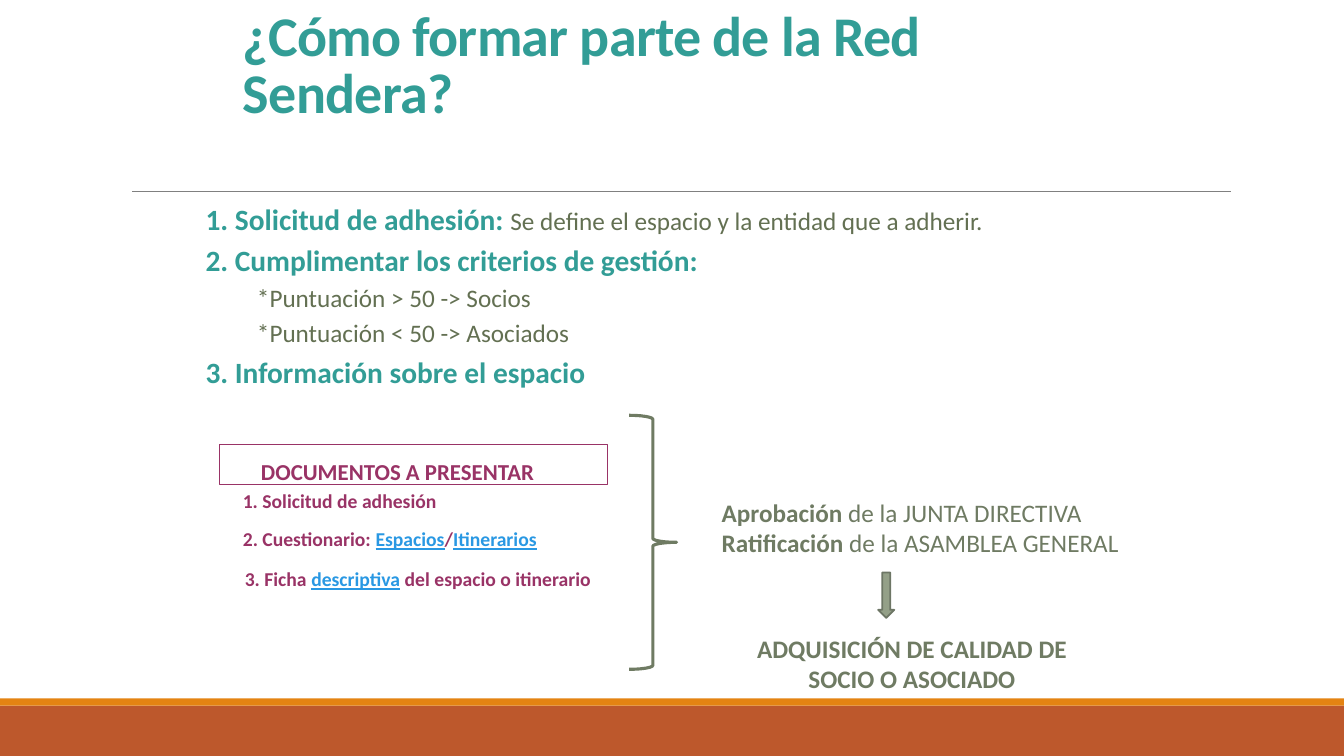
from dataclasses import dataclass

from pptx import Presentation
from pptx import util as u
from pptx.dml.color import RGBColor
from pptx.enum import shapes, text
from pptx.oxml.xmlchemy import OxmlElement

KIND = shapes.MSO_SHAPE
ANCHOR = text.MSO_ANCHOR
ALIGN = text.PP_ALIGN


@dataclass(frozen=True)
class Theme:
    font: str = "Calibri"
    teal: str = "329D96"
    olive: str = "637052"
    plum: str = "993366"
    link: str = "2998E3"
    sage: str = "6F7B63"
    arrow_fill: str = "94A088"
    arrow_line: str = "6D7665"
    rule: str = "808080"
    orange: str = "E48312"
    rust: str = "BD582C"
    title: float = 40
    heading: float = 21
    body: float = 18
    label: float = 16.3
    item: float = 14


T = Theme()


@dataclass(frozen=True)
class Run:
    words: str
    size: float
    color: str
    bold: bool = True
    underline: bool = False


@dataclass(frozen=True)
class Para:
    runs: list[Run]
    before: float = 0  # share of the type size
    indent: float = 0
    align: ALIGN = ALIGN.LEFT


@dataclass(frozen=True)
class TextBox:
    at: tuple[float, float, float, float]
    paras: list[Para]
    anchor: ANCHOR = ANCHOR.MIDDLE


@dataclass(frozen=True)
class Figure:
    kind: KIND
    at: tuple[float, float, float, float]
    fill: str | None = None
    line: str | None = None
    weight: float = 0


def heading(words: str, *more: Run) -> Para:
    return Para([Run(words, T.heading, T.teal), *more], 0.2)


def score(words: str) -> Para:
    return Para([Run(words, T.body, T.olive, False)], 0.2, 0.51)


def document(*parts: str) -> list[Para]:
    """One document line; every second part is styled as a link."""
    return [Para([Run(part, T.item, T.link if i % 2 else T.plum, underline=bool(i % 2))
                  for i, part in enumerate(parts)], 0.2)]


def step(name: str, rest: str) -> Para:
    return Para([Run(name, T.body, T.sage), Run(rest, T.body, T.sage, False)])


BANDS = [
    Figure(KIND.RECTANGLE, (0, 7, 13.33, 0.5), T.rust),
    Figure(KIND.RECTANGLE, (0, 6.93, 13.33, 0.07), T.orange),
]
FIGURES = [
    Figure(KIND.RECTANGLE, (2.18, 4.41, 3.85, 0.4), None, T.plum, 0.75),
    Figure(KIND.RIGHT_BRACE, (6.24, 4.12, 0.47, 2.52), None, T.sage, 2.25),
    Figure(KIND.DOWN_ARROW, (8.71, 5.68, 0.16, 0.45), T.arrow_fill, T.arrow_line, 1.25),
]
TITLE = TextBox((2.31, 0.6, 8.61, 0.69), [
    Para([Run("¿Cómo formar parte de la Red Sendera?", T.title, T.teal)]),
], ANCHOR.BOTTOM)
BOXES = [
    TextBox((1.94, 1.93, 8.82, 1.99), [
        heading("1. Solicitud de adhesión: ",
                Run("Se define el espacio y la entidad que a adherir.", T.body, T.olive, False)),
        heading("2. Cumplimentar los criterios de gestión:"),
        score("*Puntuación > 50 -> Socios"),
        score("*Puntuación < 50 -> Asociados"),
        heading("3. Información sobre el espacio"),
    ]),
    TextBox((2.49, 4.52, 4.13, 0.31),
            [Para([Run("DOCUMENTOS A PRESENTAR", T.label, T.plum)], 0.2)]),
    TextBox((2.31, 4.81, 2.36, 0.31), document("1. Solicitud de adhesión")),
    TextBox((2.31, 5.19, 3.52, 0.31),
            document("2. Cuestionario: ", "Espacios", "/", "Itinerarios")),
    TextBox((2.33, 5.59, 3.67, 0.31),
            document("3. Ficha ", "descriptiva", " del espacio o itinerario")),
    TextBox((7.06, 4.88, 4.25, 0.71), [
        step("Aprobación", " de la JUNTA DIRECTIVA"),
        step("Ratificación", " de la ASAMBLEA GENERAL"),
    ], ANCHOR.TOP),
    TextBox((7.35, 6.23, 3.39, 0.71), [
        Para([Run("ADQUISICIÓN DE CALIDAD DE SOCIO O ASOCIADO", T.body, T.sage)],
             align=ALIGN.CENTER),
    ], ANCHOR.TOP),
]


def inches(values: tuple[float, ...]) -> list[u.Length]:
    return [u.Inches(v) for v in values]


def draw_figure(slide, fig: Figure) -> None:
    sp = slide.shapes.add_shape(fig.kind, *inches(fig.at))
    sp.shadow.inherit = False
    if fig.fill:
        sp.fill.solid()
        sp.fill.fore_color.rgb = RGBColor.from_string(fig.fill)
    else:
        sp.fill.background()
    if fig.line:
        sp.line.color.rgb = RGBColor.from_string(fig.line)
        sp.line.width = u.Pt(fig.weight)
    else:
        sp.line.fill.background()


def draw_rule(slide) -> None:
    line = slide.shapes.add_connector(shapes.MSO_CONNECTOR.STRAIGHT,
                                      *inches((1.31, 1.9, 12.21, 1.9)))
    line.line.color.rgb = RGBColor.from_string(T.rule)
    line.line.width = u.Pt(0.5)
    line._element.spPr.append(OxmlElement("a:effectLst"))


def write(sp, box: TextBox) -> None:
    tf = sp.text_frame
    frame_format = {"word_wrap": True, "auto_size": text.MSO_AUTO_SIZE.NONE,
                    "vertical_anchor": box.anchor}
    for name, value in frame_format.items():
        setattr(tf, name, value)
    for i, para in enumerate(box.paras):
        p = tf.add_paragraph() if i else tf.paragraphs[0]
        p.alignment = para.align
        p.space_before = u.Pt(para.before * para.runs[0].size)
        if para.indent:
            p._p.get_or_add_pPr().set("marL", str(u.Inches(para.indent)))
        for run in para.runs:
            r = p.add_run()
            r.text = run.words
            run_format = {"name": T.font, "size": u.Pt(run.size),
                          "bold": run.bold, "underline": run.underline}
            for name, value in run_format.items():
                setattr(r.font, name, value)
            r.font.color.rgb = RGBColor.from_string(run.color)


def draw_title(slide) -> None:
    sp = slide.shapes.title
    sp.left, sp.top, sp.width, sp.height = inches(TITLE.at)
    write(sp, TITLE)
    p = sp.text_frame.paragraphs[0]
    p.line_spacing = 0.85
    p.runs[0]._r.get_or_add_rPr().set("spc", "-50")


def main() -> None:
    prs = Presentation()
    prs.slide_width, prs.slide_height = inches((13.33, 7.5))
    slide = prs.slides.add_slide(prs.slide_layouts.get_by_name("Title Only"))
    for band in BANDS:
        draw_figure(slide, band)
    draw_rule(slide)
    draw_title(slide)
    for box in BOXES:
        write(slide.shapes.add_textbox(*inches(box.at)), box)
    for fig in FIGURES:
        draw_figure(slide, fig)
    prs.save("out.pptx")


if __name__ == "__main__":
    main()
